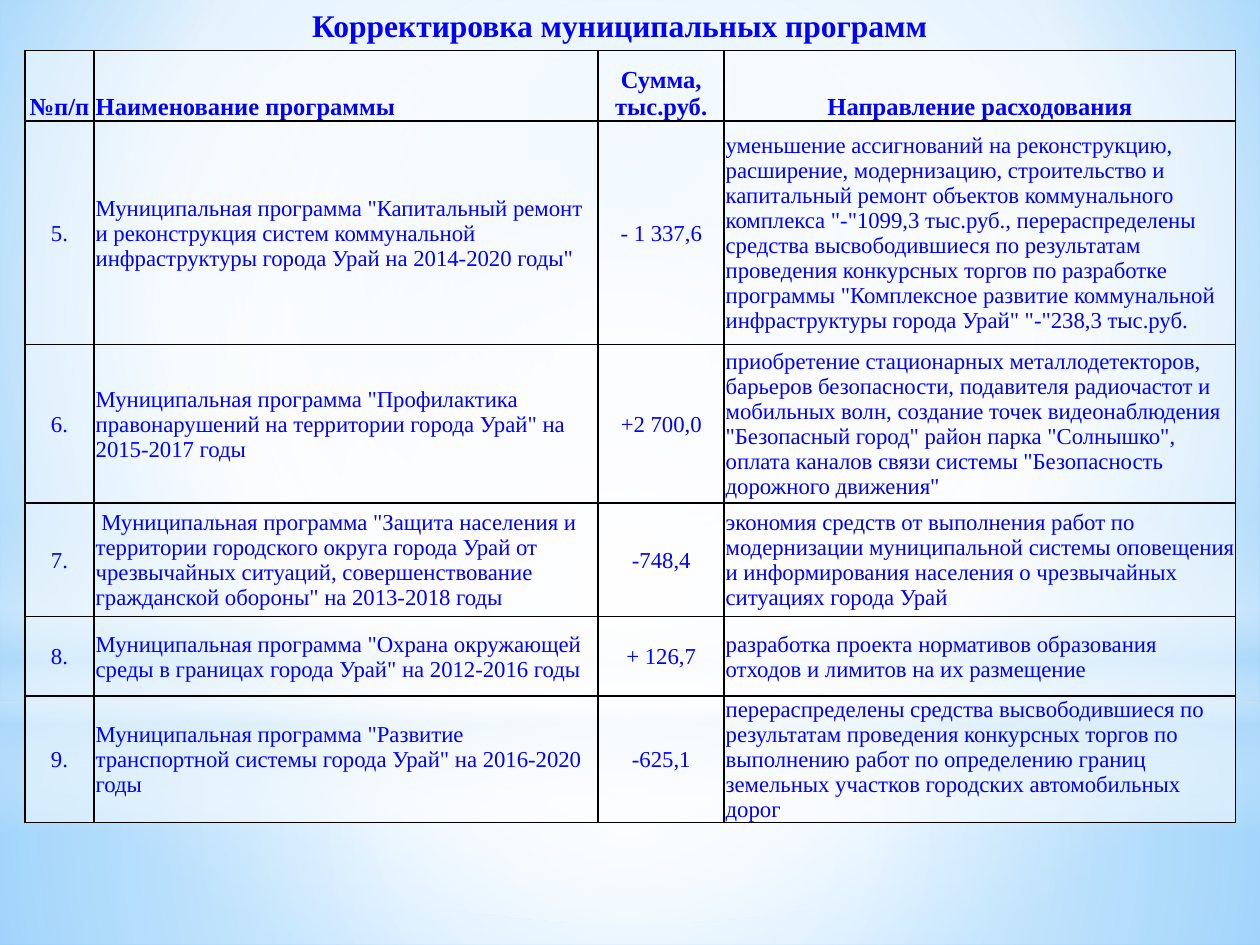
from lxml.etree import SubElement
from pptx import Presentation
from pptx.dml.color import RGBColor
from pptx.enum.shapes import MSO_SHAPE as Preset
from pptx.enum.text import MSO_ANCHOR as Anchor, MSO_AUTO_SIZE as AutoSize, PP_ALIGN as Align
from pptx.oxml.ns import qn
from pptx.util import Cm, Pt

COLORS = {
    "text": "0000FF",
    "border": "000000",
    "white": "FFFFFF",
    "haze": "B4DCFA",
    "sky": "9ED5FF",
    "deep_sky": "5BB9FF",
}
FONT = "Times New Roman"
CENTER = (50, 50, 50, 50)

BACKDROP = [(0, "sky", 100), (60, "white", 100), (100, "deep_sky", 100)]
LOWER_GLOW = [(0, "white", 91), (37, "white", 76), (100, "haze", 79)]
UPPER_GLOW = [(0, "white", 89), (48, "white", 62), (100, "haze", 79)]
HORIZON = [(0, "white", 0), (29, "white", 30), (45, "haze", 40),
           (55, "white", 26), (65, "haze", 60), (100, "white", 0)]
HALO = [(0, "white", 100), (56, "white", 0)]

COLUMN_WIDTHS = (1.4, 10.16, 2.54, 10.31)
ROW_HEIGHTS = (1.42, 4.5, 3.2, 2.29, 1.6, 1.6)
HEADER = ("№п/п", "Наименование программы", "Сумма, тыс.руб.", "Направление расходования")
PROGRAMS = [
    ("5.",
     'Муниципальная программа "Капитальный ремонт и реконструкция систем коммунальной '
     'инфраструктуры города Урай на 2014-2020 годы"',
     "- 1 337,6",
     "уменьшение ассигнований на реконструкцию, расширение, модернизацию, строительство и "
     'капитальный ремонт объектов коммунального комплекса "-"1099,3 тыс.руб., '
     "перераспределены средства высвободившиеся по результатам проведения конкурсных торгов "
     'по разработке программы "Комплексное развитие коммунальной инфраструктуры города Урай" '
     '"-"238,3 тыс.руб.'),
    ("6.",
     'Муниципальная программа "Профилактика правонарушений на территории города Урай" '
     "на 2015-2017 годы",
     "+2 700,0",
     "приобретение стационарных металлодетекторов, барьеров безопасности, подавителя "
     "радиочастот и мобильных волн, создание точек видеонаблюдения "
     '"Безопасный город" район парка "Солнышко", оплата каналов связи системы '
     '"Безопасность дорожного движения"'),
    ("7.",
     ' Муниципальная программа "Защита населения и территории городского округа города Урай '
     'от чрезвычайных ситуаций, совершенствование гражданской обороны" на 2013-2018 годы',
     "-748,4",
     "экономия средств от выполнения работ по модернизации муниципальной системы оповещения "
     "и информирования населения о чрезвычайных ситуациях города Урай"),
    ("8.",
     'Муниципальная программа "Охрана окружающей среды в границах города Урай" '
     "на 2012-2016 годы",
     "+ 126,7",
     "разработка проекта нормативов образования отходов и лимитов на их размещение"),
    ("9.",
     'Муниципальная программа "Развитие транспортной системы города Урай" на 2016-2020 годы',
     "-625,1",
     "перераспределены средства высвободившиеся по результатам проведения конкурсных торгов "
     "по выполнению работ по определению границ земельных участков городских автомобильных "
     "дорог"),
]


def add_color(parent, color, opacity=100):
    rgb = SubElement(parent, qn("a:srgbClr"), val=COLORS[color])
    if opacity < 100:
        SubElement(rgb, qn("a:alpha"), val=str(opacity * 1000))


def apply_gradient(fill, properties, stops, focus=None):
    fill.solid()
    solid = properties.find(qn("a:solidFill"))
    gradient = SubElement(properties, qn("a:gradFill"), rotWithShape="1")
    properties.replace(solid, gradient)
    stop_list = SubElement(gradient, qn("a:gsLst"))
    for position, color, opacity in stops:
        stop = SubElement(stop_list, qn("a:gs"), pos=str(position * 1000))
        add_color(stop, color, opacity)
    if focus:
        circle = SubElement(gradient, qn("a:path"), {"path": "circle"})
        edges = {side: str(value * 1000) for side, value in zip("ltrb", focus)}
        SubElement(circle, qn("a:fillToRect"), edges)
    else:
        SubElement(gradient, qn("a:lin"), ang=str(90 * 60000), scaled="0")


def paint_background(slide):
    fill = slide.background.fill
    fill.solid()
    properties = slide.element.find(".//" + qn("p:bgPr"))
    apply_gradient(fill, properties, BACKDROP, (20, 10, 20, 60))


def add_glow(slide, preset, top, height, stops, focus=CENTER):
    glow = slide.shapes.add_shape(preset, 0, Cm(top), Cm(25.4), Cm(height))
    glow.shadow.inherit = False
    glow.line.fill.background()
    apply_gradient(glow.fill, glow.element.spPr, stops, focus)


def style_paragraph(paragraph, size, bold, align):
    paragraph.alignment = align
    paragraph.font.name = FONT
    paragraph.font.size = Pt(size)
    paragraph.font.bold = bold
    paragraph.font.color.rgb = RGBColor.from_string(COLORS["text"])


def place_title(slide):
    title = slide.shapes.title
    title.left, title.top, title.width, title.height = Cm(1.09), 0, Cm(22.81), Cm(1.02)
    title.text_frame.text = "Корректировка муниципальных программ"
    title.text_frame.word_wrap = True
    title.text_frame.auto_size = AutoSize.SHAPE_TO_FIT_TEXT
    style_paragraph(title.text_frame.paragraphs[0], 18, True, Align.CENTER)
    slide.shapes.element.append(title.element)


def style_cell(cell):
    cell.margin_left = cell.margin_top = cell.margin_right = Cm(0.03)
    cell.margin_bottom = 0
    cell.fill.solid()
    cell.fill.fore_color.rgb = RGBColor.from_string(COLORS["white"])
    properties = cell._tc.tcPr
    SubElement(properties.find(".//" + qn("a:srgbClr")), qn("a:alpha"), val="47000")
    for index, side in enumerate("LRTB"):
        border = SubElement(properties, qn("a:ln" + side), w=str(Pt(1)))
        add_color(SubElement(border, qn("a:solidFill")), "border")
        properties.insert(index, border)


def add_program_table(slide):
    frame = slide.shapes.add_table(
        len(ROW_HEIGHTS), len(COLUMN_WIDTHS), Cm(0.5), Cm(1.02),
        Cm(sum(COLUMN_WIDTHS)), Cm(sum(ROW_HEIGHTS)))
    programs = frame.table
    for column, width in zip(programs.columns, COLUMN_WIDTHS):
        column.width = Cm(width)
    for row, height in zip(programs.rows, ROW_HEIGHTS):
        row.height = Cm(height)
    for row_index, values in enumerate([HEADER, *PROGRAMS]):
        is_header = row_index == 0
        for column_index, value in enumerate(values):
            cell = programs.cell(row_index, column_index)
            cell.text = value
            cell.vertical_anchor = Anchor.BOTTOM if is_header else Anchor.MIDDLE
            centered = column_index in (0, 2) or (is_header and column_index == 3)
            style_paragraph(cell.text_frame.paragraphs[0], 14 if is_header else 13,
                            is_header, Align.CENTER if centered else Align.LEFT)
            style_cell(cell)


def main():
    prs = Presentation()
    prs.slide_width, prs.slide_height = Cm(25.4), Cm(19.05)
    slide = prs.slides.add_slide(prs.slide_layouts[5])
    paint_background(slide)
    add_glow(slide, Preset.RECTANGLE, 14.17, 4.88, LOWER_GLOW)
    add_glow(slide, Preset.RECTANGLE, 0, 14.17, UPPER_GLOW)
    add_glow(slide, Preset.RECTANGLE, 10.46, 6.35, HORIZON, focus=None)
    add_glow(slide, Preset.OVAL, 4.45, 14.17, HALO)
    add_program_table(slide)
    place_title(slide)
    prs.save("out.pptx")


if __name__ == "__main__":
    main()
